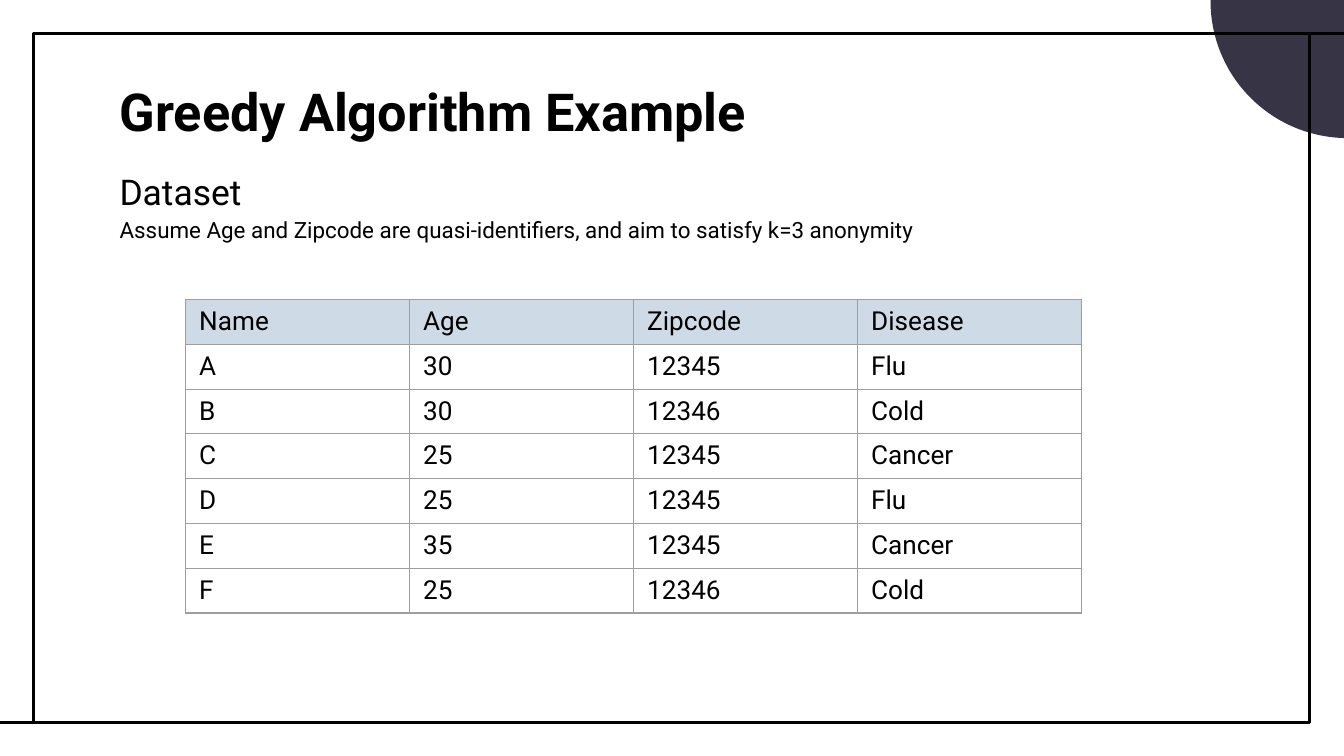
import pptx
import pptx.util
import pptx.dml.color
import pptx.enum.shapes
import pptx.enum.text
import pptx.oxml.ns
import lxml.etree

Pt = pptx.util.Pt
RGBColor = pptx.dml.color.RGBColor
Anchor = pptx.enum.text.MSO_ANCHOR
Shape = pptx.enum.shapes.MSO_SHAPE
qn = pptx.oxml.ns.qn

TITLE = "Greedy Algorithm Example"
INTRO = [
    ("Dataset", 19),
    ("Assume Age and Zipcode are quasi-identifiers, and aim to satisfy k=3 anonymity", 12),
]
RECORDS = [
    ("Name", "Age", "Zipcode", "Disease"),
    ("A", "30", "12345", "Flu"),
    ("B", "30", "12346", "Cold"),
    ("C", "25", "12345", "Cancer"),
    ("D", "25", "12345", "Flu"),
    ("E", "35", "12345", "Cancer"),
    ("F", "25", "12346", "Cold"),
]

FONT = "Roboto"
BLACK = RGBColor(0, 0, 0)
WHITE = RGBColor(255, 255, 255)
DARK = RGBColor(0x37, 0x35, 0x45)
HEADER_BLUE = RGBColor(0xCE, 0xDB, 0xE6)
BORDER_GREY = RGBColor(0x9E, 0x9E, 0x9E)

TEXT_LEFT = 57
COLUMN_WIDTH, ROW_HEIGHT = 120, 24
FRAME_LINES = [((18.5, 387), (-1.5, 387)), ((722, 18), (702, 18))]


def set_font(paragraph, size, bold=False):
    font = paragraph.font
    font.name, font.size, font.bold = FONT, Pt(size), bold
    font.color.rgb = BLACK


def set_frame(frame, anchor):
    frame.word_wrap = True
    frame.auto_size = pptx.enum.text.MSO_AUTO_SIZE.NONE
    frame.vertical_anchor = anchor
    frame.margin_left = frame.margin_right = Pt(7.2)
    frame.margin_top = frame.margin_bottom = Pt(7.2)


def set_line(line):
    line.color.rgb = BLACK
    line.width = Pt(1.5)


def add_plain_shape(page, kind, left, top, width, height):
    shape = page.shapes.add_shape(kind, Pt(left), Pt(top), Pt(width), Pt(height))
    shape.shadow.inherit = False
    return shape


def add_decoration(page):
    circle = add_plain_shape(page, Shape.OVAL, 648.5, -73, 147, 147)
    circle.fill.solid()
    circle.fill.fore_color.rgb = DARK
    circle.line.fill.background()

    border = add_plain_shape(page, Shape.RECTANGLE, 18, 18, 683.5, 369)
    border.fill.background()
    set_line(border.line)

    for start, end in FRAME_LINES:
        connector = page.shapes.add_connector(
            pptx.enum.shapes.MSO_CONNECTOR.STRAIGHT, *map(Pt, start + end))
        set_line(connector.line)
        lxml.etree.SubElement(connector._element.spPr, qn("a:effectLst"))


def add_heading(page):
    title = page.shapes.title
    title.left, title.top, title.width, title.height = map(Pt, (TEXT_LEFT, 35.5, 607, 45))
    set_frame(title.text_frame, Anchor.TOP)
    title.text_frame.text = TITLE
    paragraph = title.text_frame.paragraphs[0]
    paragraph.alignment = pptx.enum.text.PP_ALIGN.LEFT
    set_font(paragraph, 28, True)

    box = page.shapes.add_textbox(Pt(TEXT_LEFT), Pt(86.5), Pt(557), Pt(51))
    set_frame(box.text_frame, Anchor.BOTTOM)
    box.text_frame.text = "\n".join(text for text, size in INTRO)
    for paragraph, (text, size) in zip(box.text_frame.paragraphs, INTRO):
        paragraph.line_spacing = 1.15
        set_font(paragraph, size)


def set_borders(cell):
    properties = cell._tc.get_or_add_tcPr()
    for position, side in enumerate(("lnL", "lnR", "lnT", "lnB")):
        line = lxml.etree.Element(qn("a:" + side), w=str(Pt(0.75)))
        fill = lxml.etree.SubElement(line, qn("a:solidFill"))
        lxml.etree.SubElement(fill, qn("a:srgbClr"), val=str(BORDER_GREY))
        properties.insert(position, line)


def add_records(page):
    rows, columns = len(RECORDS), len(RECORDS[0])
    table = page.shapes.add_table(
        rows, columns, Pt(99.5), Pt(160.5),
        Pt(columns * COLUMN_WIDTH), Pt(rows * ROW_HEIGHT)).table
    table.horz_banding = False
    for row, record in enumerate(RECORDS):
        for column, value in enumerate(record):
            cell = table.cell(row, column)
            cell.text = value
            set_font(cell.text_frame.paragraphs[0], 14)
            cell.fill.solid()
            cell.fill.fore_color.rgb = WHITE if row else HEADER_BLUE
            set_borders(cell)


def main():
    deck = pptx.Presentation()
    deck.slide_width, deck.slide_height = Pt(720), Pt(405)
    page = deck.slides.add_slide(deck.slide_layouts[5])
    add_decoration(page)
    add_heading(page)
    add_records(page)
    deck.save("out.pptx")


if __name__ == "__main__":
    main()
